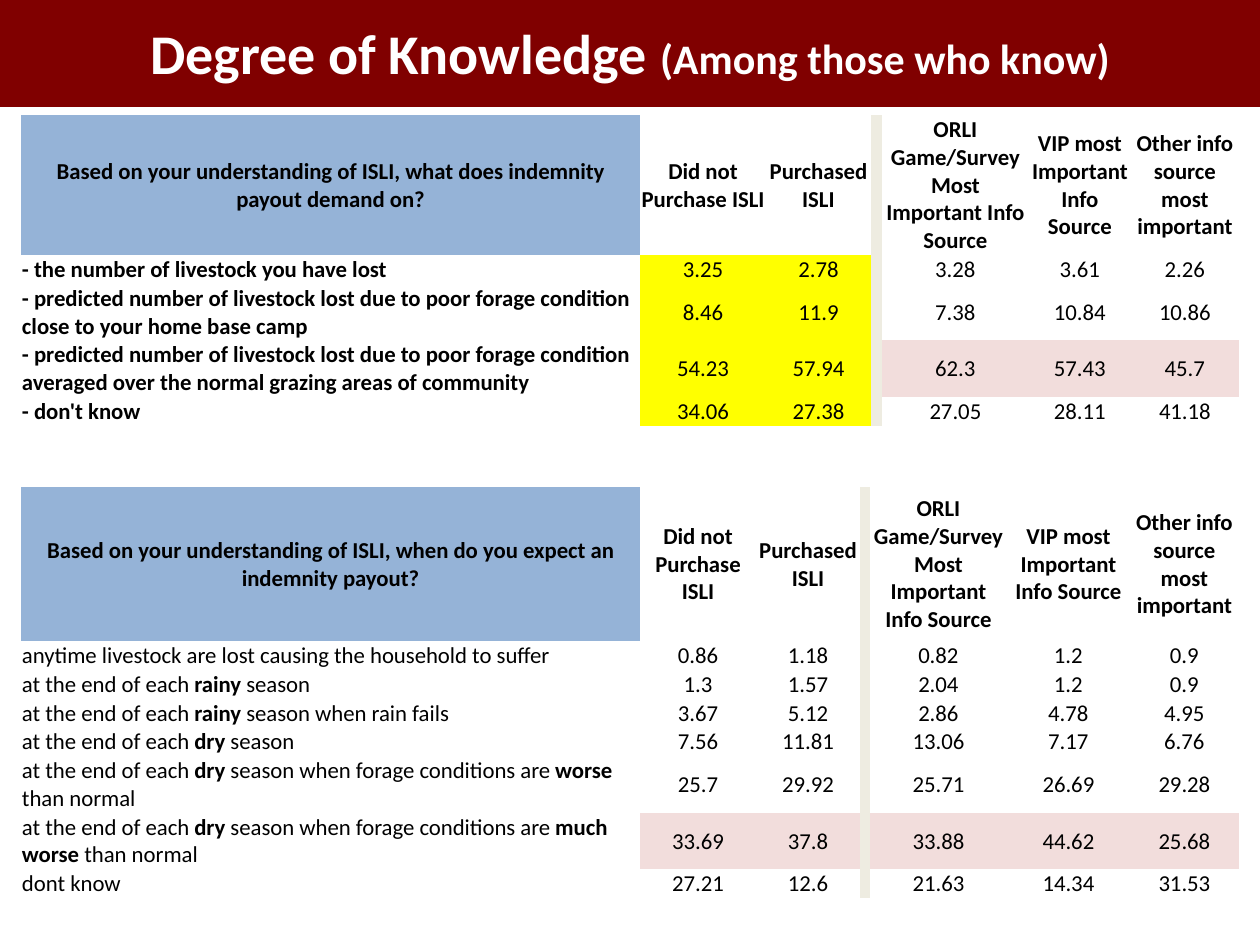
from pptx import Presentation
from pptx.dml.color import RGBColor
from pptx.enum import text
from pptx.oxml.ns import qn
from pptx.util import Pt

PX = 914400 // 126
FONT = "Calibri"
MAROON, WHITE, BLACK = "800000", "FFFFFF", "000000"
BLUE, YELLOW, PINK, DIVIDER = "95B3D7", "FFFF00", "F2DDDC", "EEECE1"
NO_STYLE = "{2D5ABB26-0587-4C30-8999-92F81FD0307C}"
DIVIDER_COL = 3

# Content: ** switches bold on and off
TITLE = [("Degree of Knowledge ", 32), ("(Among those who know)", 24)]
GROUPS = ["Did not Purchase ISLI", "Purchased ISLI", "",
          "ORLI Game/Survey Most Important Info Source",
          "VIP most Important Info Source", "Other info source most important"]

PAYOUT_BASIS = {
    "question": "Based on your understanding of ISLI, what does indemnity payout demand on?",
    "top": 115,
    "cols": [619, 126, 105, 11, 147, 102, 108],
    "rows": [140, 28, 56, 56, 28],
    "answers": [
        ("**- the number of livestock you have lost**", "3.25 2.78 3.28 3.61 2.26"),
        ("**- predicted number of livestock lost due to poor forage condition "
         "close to your home base camp**", "8.46 11.9 7.38 10.84 10.86"),
        ("**- predicted number of livestock lost due to poor forage condition "
         "averaged over the normal grazing areas of community**",
         "54.23 57.94 62.3 57.43 45.7"),
        ("**- don't know**", "34.06 27.38 27.05 28.11 41.18"),
    ],
    # (rows, columns, colour)
    "highlights": [(range(1, 5), (1, 2), YELLOW), ((3,), (4, 5, 6), PINK)],
}
PAYOUT_TIMING = {
    "question": "Based on your understanding of ISLI, when do you expect an indemnity payout?",
    "top": 487,
    "cols": [619, 116, 104, 10, 137, 123, 109],
    "rows": [154, 28, 28, 28, 28, 56, 56, 28],
    "answers": [
        ("anytime livestock are lost causing the household to suffer",
         "0.86 1.18 0.82 1.2 0.9"),
        ("at the end of each **rainy** season", "1.3 1.57 2.04 1.2 0.9"),
        ("at the end of each **rainy** season when rain fails", "3.67 5.12 2.86 4.78 4.95"),
        ("at the end of each **dry** season", "7.56 11.81 13.06 7.17 6.76"),
        ("at the end of each **dry** season when forage conditions are **worse** than normal",
         "25.7 29.92 25.71 26.69 29.28"),
        ("at the end of each **dry** season when forage conditions are **much worse **than normal",
         "33.69 37.8 33.88 44.62 25.68"),
        ("dont know", "27.21 12.6 21.63 14.34 31.53"),
    ],
    "highlights": [((6,), (1, 2, 4, 5, 6), PINK)],
}


def rgb(value):
    return RGBColor.from_string(value)


def add_run(paragraph, words, size, colour, bold):
    run = paragraph.add_run()
    run.text = words
    run.font.name, run.font.size, run.font.bold = FONT, Pt(size), bold
    run.font.color.rgb = rgb(colour)


def fill_cell(cell, words, colour, is_answer):
    cell.margin_left = cell.margin_right = cell.margin_top = PX
    cell.margin_bottom = 0
    cell.vertical_anchor = text.MSO_ANCHOR.BOTTOM if is_answer else text.MSO_ANCHOR.MIDDLE
    if colour:
        cell.fill.solid()
        cell.fill.fore_color.rgb = rgb(colour)
    else:
        cell.fill.background()
    paragraph = cell.text_frame.paragraphs[0]
    paragraph.alignment = text.PP_ALIGN.LEFT if is_answer else text.PP_ALIGN.CENTER
    for i, part in enumerate(words.split("**")):
        if part:
            add_run(paragraph, part, 13, BLACK, i % 2 == 1)
    if not words:  # keeps the empty divider from stretching its row
        paragraph._p.get_or_add_endParaRPr().set("sz", "1300")


def add_survey(slide, survey):
    cols, rows = survey["cols"], survey["rows"]
    table = slide.shapes.add_table(
        len(rows), len(cols), 21 * PX, survey["top"] * PX,
        sum(cols) * PX, sum(rows) * PX).table
    table.first_row = table.horz_banding = False
    table._tbl.tblPr.find(qn("a:tableStyleId")).text = NO_STYLE
    for column, width in zip(table.columns, cols):
        column.width = width * PX
    for row, height in zip(table.rows, rows):
        row.height = height * PX

    # Colours by cell
    colours = {(0, 0): BLUE}
    colours.update({(r, DIVIDER_COL): DIVIDER for r in range(len(rows))})
    for marked_rows, marked_cols, colour in survey["highlights"]:
        colours.update({(r, c): colour for r in marked_rows for c in marked_cols})

    # Header line, then one line per answer
    lines = [[f"**{name}**" if name else "" for name in [survey["question"], *GROUPS]]]
    for answer, shares in survey["answers"]:
        line = [answer, *shares.split()]
        line.insert(DIVIDER_COL, "")
        lines.append(line)
    for r, line in enumerate(lines):
        for c, words in enumerate(line):
            fill_cell(table.cell(r, c), words, colours.get((r, c)), r > 0 and c == 0)


def main():
    prs = Presentation()
    prs.slide_width, prs.slide_height = 1260 * PX, 945 * PX
    slide = prs.slides.add_slide(prs.slide_layouts[5])

    # Title band
    title = slide.shapes.title
    title.left, title.top, title.width, title.height = 0, 0, 1260 * PX, 105 * PX
    title.fill.solid()
    title.fill.fore_color.rgb = title.line.color.rgb = rgb(MAROON)
    title.line.width = Pt(2)
    title.text_frame.vertical_anchor = text.MSO_ANCHOR.MIDDLE
    heading = title.text_frame.paragraphs[0]
    heading.alignment = text.PP_ALIGN.CENTER
    for words, size in TITLE:
        add_run(heading, words, size, WHITE, True)

    # Survey tables
    for survey in (PAYOUT_BASIS, PAYOUT_TIMING):
        add_survey(slide, survey)
    prs.save("out.pptx")


if __name__ == "__main__":
    main()
